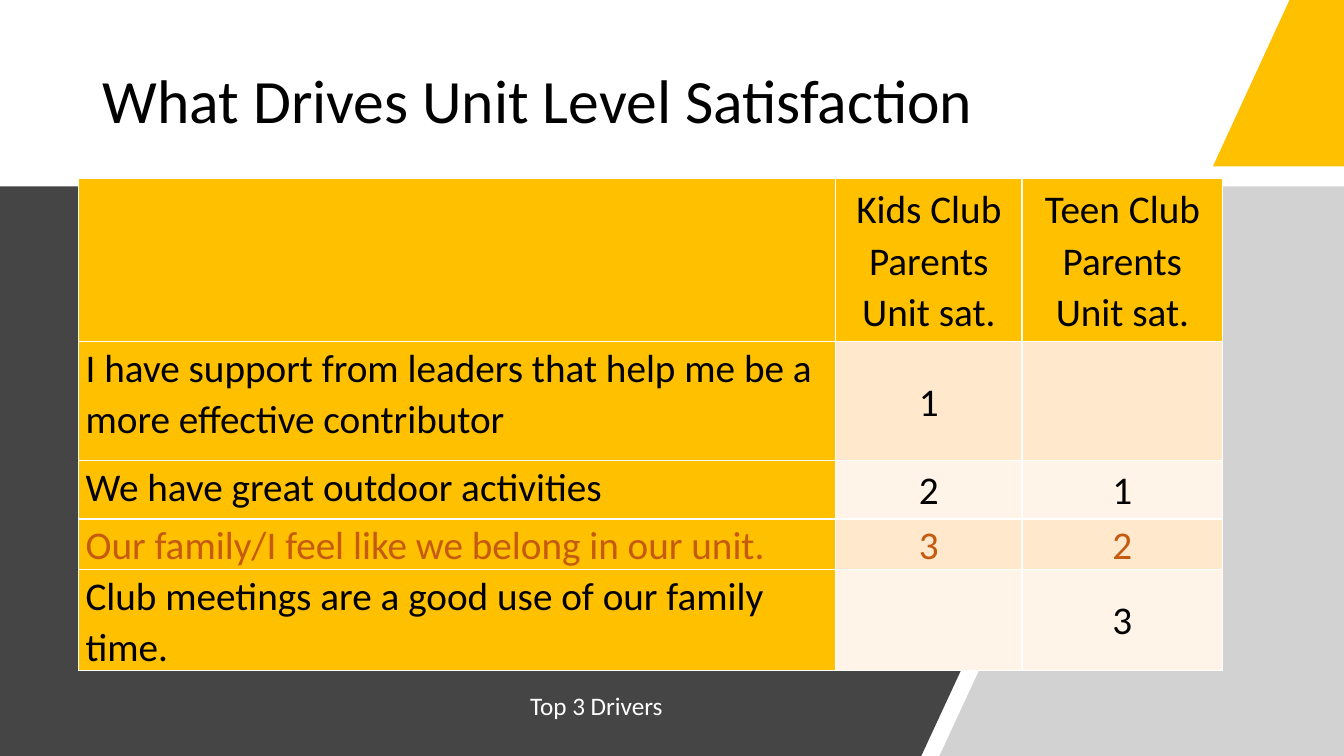
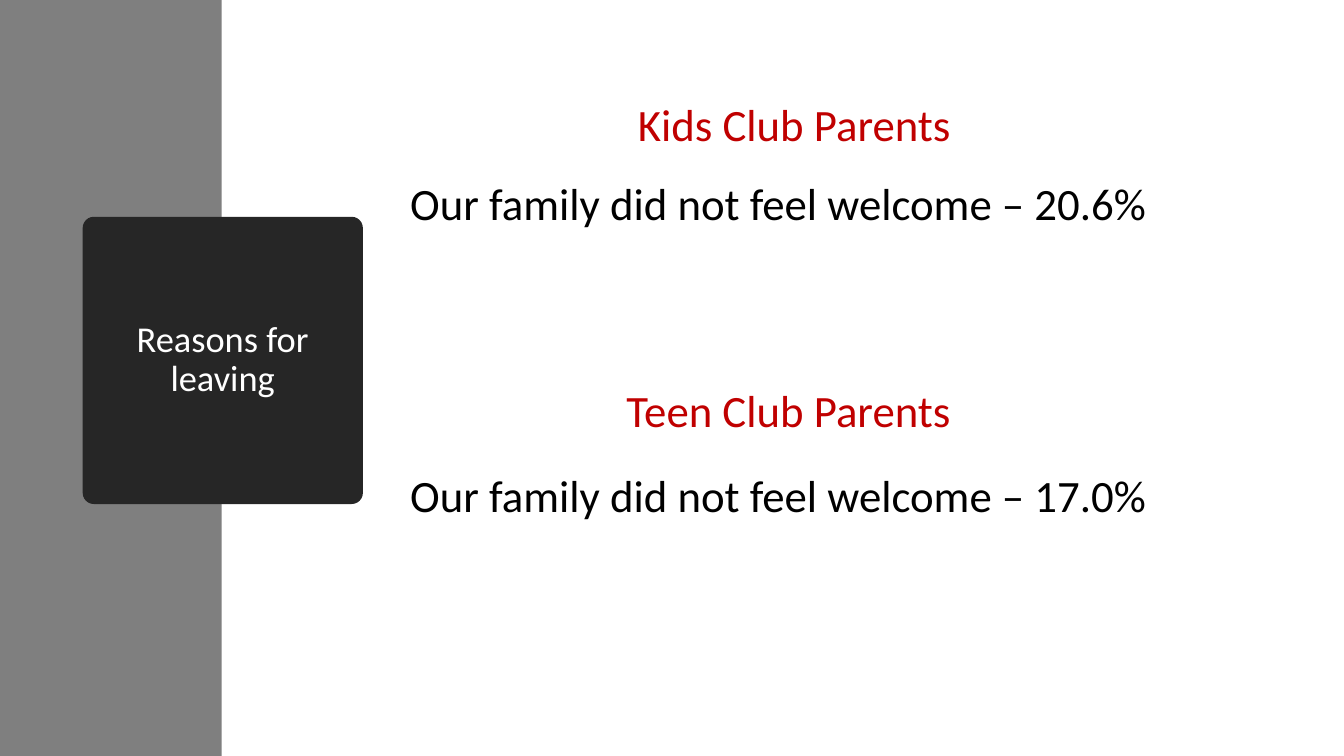
from dataclasses import dataclass

from lxml import etree
from pptx import Presentation
from pptx.dml.color import RGBColor
from pptx.enum.shapes import MSO_SHAPE
from pptx.enum.text import MSO_ANCHOR, PP_ALIGN
from pptx.oxml.ns import qn
from pptx.util import Inches, Pt

LEFT, CENTER = PP_ALIGN.LEFT, PP_ALIGN.CENTER
TOP, MIDDLE = MSO_ANCHOR.TOP, MSO_ANCHOR.MIDDLE
RECT, ROUND = MSO_SHAPE.RECTANGLE, MSO_SHAPE.ROUNDED_RECTANGLE

# Shared look
FONT = "Calibri"
WIDE, HIGH = Inches(13.333), Inches(7.5)
WHITE, BLACK = "FFFFFF", "000000"
GOLD, RUST, RED = "FFC000", "C55A11", "C00000"
DARK, PALE, GREY, COAL = "454545", "D2D2D2", "7F7F7F", "262626"
BANDS = ("FFE8CC", "FFF4E7")


@dataclass
class Style:
    size: float
    color: str = BLACK
    align: PP_ALIGN = LEFT
    anchor: MSO_ANCHOR = TOP
    lead: float = 1.0


@dataclass
class Label:
    text: str
    box: tuple  # left, top, width, height as percent of the slide
    style: Style


@dataclass
class Band:
    color: str
    points: tuple  # corners as percent of the slide


@dataclass
class Row:
    cells: tuple
    height: float
    color: str = BLACK


TITLE = Style(44, anchor=MIDDLE, lead=0.9)
NOTE = Style(18, WHITE)
TILE = Style(26, WHITE, CENTER, MIDDLE, 0.9)
HEAD = Style(32, RED, CENTER)
BODY = Style(32)

# Groups named on both slides
KIDS, TEENS = "Kids Club Parents", "Teen Club Parents"

# Slide 1: drivers
SWEEP = (
    Band(GOLD, ((95.95, 0), (100, 0), (100, 22), (90.25, 22))),
    Band(DARK, ((0, 24.67), (88.2, 24.67), (68.55, 100), (0, 100))),
    Band(PALE, ((89.55, 24.67), (100, 24.67), (100, 100), (69.9, 100))),
)
DRIVERS = (
    Label("What Drives Unit Level Satisfaction", (6.9, 5.33, 80.5, 16.67), TITLE),
    Label("Top 3 Drivers", (38.7, 90.67, 16.9, 5.33), NOTE),
)
SPOT = (5.85, 23.6)
COLS = (56.32, 13.88, 14.93)
ROWS = (
    Row(("", f"{KIDS}\nUnit sat.", f"{TEENS}\nUnit sat."), 21.6),
    Row(("I have support from leaders that help me be a more effective contributor",
         "1", ""), 15.73),
    Row(("We have great outdoor activities", "2", "1"), 7.73),
    Row(("Our family/I feel like we belong in our unit.", "3", "2"), 6.67, RUST),
    Row(("Club meetings are a good use of our family time.", "", "3"), 13.33),
)

# Slide 2: reasons
REASONS = (
    Label(KIDS, (29.78, 12.13, 58.66, 8.53), HEAD),
    Label("Our family did not feel welcome – 20.6%", (29.78, 23.33, 65.25, 9.73),
          Style(32, lead=0.9)),
    Label(TEENS, (27.4, 50, 62.55, 8.53), HEAD),
    Label("Our family did not feel welcome – 17.0%", (29.78, 61.2, 62.55, 8.53), BODY),
)


def tint(code: str) -> RGBColor:
    return RGBColor.from_string(code)


def across(share: float) -> int:
    return round(WIDE * share / 100)


def down(share: float) -> int:
    return round(HIGH * share / 100)


def place(box: tuple) -> tuple:
    x, y, w, h = box
    return across(x), down(y), across(w), down(h)


def write(frame, text: str, style: Style) -> None:
    frame.text = text
    frame.word_wrap = True
    frame.vertical_anchor = style.anchor
    for para in frame.paragraphs:
        para.alignment = style.align
        para.line_spacing = style.lead
        for run in para.runs:
            run.font.name = FONT
            run.font.size = Pt(style.size)
            run.font.color.rgb = tint(style.color)


def paint(shape, color: str) -> None:
    shape.shadow.inherit = False
    shape.fill.solid()
    shape.fill.fore_color.rgb = tint(color)
    shape.line.fill.background()


def add_label(slide, label: Label) -> None:
    write(slide.shapes.add_textbox(*place(label.box)).text_frame,
          label.text, label.style)


def add_block(slide, kind: MSO_SHAPE, box: tuple, color: str):
    shape = slide.shapes.add_shape(kind, *place(box))
    paint(shape, color)
    return shape


def add_band(slide, band: Band) -> None:
    first, *rest = [(across(x), down(y)) for x, y in band.points]
    pen = slide.shapes.build_freeform(*first)
    pen.add_line_segments(rest, close=True)
    paint(pen.convert_to_shape(), band.color)


def edge(cell) -> None:
    props = cell._tc.get_or_add_tcPr()
    for side in ("lnL", "lnR", "lnT", "lnB"):
        line = etree.SubElement(props, qn(f"a:{side}"), w=str(Pt(1)))
        fill = etree.SubElement(line, qn("a:solidFill"))
        etree.SubElement(fill, qn("a:srgbClr"), val=WHITE)


def add_grid(slide) -> None:
    box = (*SPOT, sum(COLS), sum(row.height for row in ROWS))
    table = slide.shapes.add_table(len(ROWS), len(COLS), *place(box)).table
    table.first_row = table.horz_banding = False
    for col, width in zip(table.columns, COLS):
        col.width = across(width)
    for r, row in enumerate(ROWS):
        table.rows[r].height = down(row.height)
        for c, text in enumerate(row.cells):
            cell = table.cell(r, c)
            cell.margin_left = cell.margin_right = Inches(0.07)
            cell.margin_top = cell.margin_bottom = 0
            align, anchor = (CENTER, MIDDLE) if c else (LEFT, TOP)
            write(cell.text_frame, text, Style(28, row.color, align, lead=1.07))
            cell.vertical_anchor = anchor
            edge(cell)
            cell.fill.solid()
            plain = r == 0 or c == 0
            cell.fill.fore_color.rgb = tint(GOLD if plain else BANDS[(r - 1) % 2])


def add_page(deck, color: str):
    slide = deck.slides.add_slide(deck.slide_layouts[6])
    slide.background.fill.solid()
    slide.background.fill.fore_color.rgb = tint(color)
    return slide


def main() -> None:
    deck = Presentation()
    deck.slide_width, deck.slide_height = WIDE, HIGH

    # Drivers
    slide = add_page(deck, WHITE)
    for band in SWEEP:
        add_band(slide, band)
    for label in DRIVERS:
        add_label(slide, label)
    add_grid(slide)

    # Reasons
    slide = add_page(deck, WHITE)
    add_block(slide, RECT, (0, 0, 16.5, 100), GREY)
    tile = add_block(slide, ROUND, (6.15, 28.67, 20.85, 38), COAL)
    tile.adjustments[0] = 0.04
    write(tile.text_frame, "Reasons for leaving", TILE)
    tile.text_frame.margin_left = tile.text_frame.margin_right = Inches(0.4)
    for label in REASONS:
        add_label(slide, label)

    deck.save("out.pptx")


if __name__ == "__main__":
    main()
